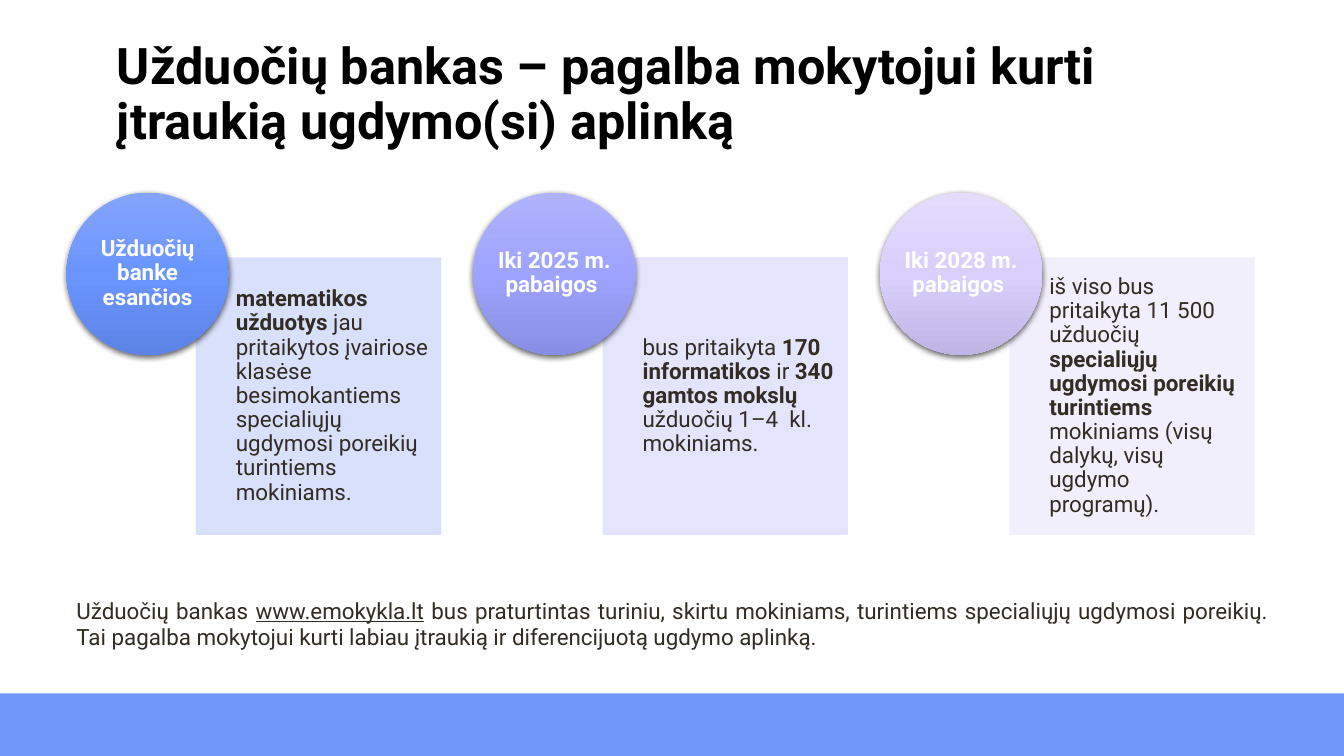
from dataclasses import dataclass

from lxml import etree
from pptx import Presentation
from pptx import util as u
from pptx.dml.color import RGBColor
from pptx.enum import shapes, text
from pptx.oxml import parse_xml
from pptx.oxml.ns import nsdecls, qn


@dataclass(frozen=True)
class Theme:
    face: str = "Roboto"
    black: str = "000000"
    white: str = "FFFFFF"
    ink: str = "322C23"
    band: str = "7198F8"
    head: int = 36
    body: int = 16


class Page:
    def __init__(self, deck, theme):
        self.deck = deck
        self.theme = theme
        self.slide = deck.slides.add_slide(deck.slide_layouts[6])

    def area(self, left, top, width, height):
        wide, high = self.deck.slide_width, self.deck.slide_height
        return (u.Emu(round(wide * left / 100)), u.Emu(round(high * top / 100)),
                u.Emu(round(wide * width / 100)), u.Emu(round(high * height / 100)))

    def letter(self, shape, parts, size, color, bold=None, align=text.PP_ALIGN.LEFT,
               anchor=text.MSO_ANCHOR.MIDDLE, inset=(0, 0, 0, 0), lead=0.9):
        frame = shape.text_frame
        frame.word_wrap = True
        frame.vertical_anchor = anchor
        (frame.margin_left, frame.margin_top,
         frame.margin_right, frame.margin_bottom) = map(u.Inches, inset)
        para = frame.paragraphs[0]
        para.alignment = align
        para.line_spacing = lead
        font = para.font
        font.name = self.theme.face
        font.size = u.Pt(size)
        font.color.rgb = RGBColor.from_string(color)
        font.bold = bold
        for words, style in parts:
            run = para.add_run()
            run.text = words
            if "b" in style:
                run.font.bold = True
            if "u" in style:
                run.font.underline = True

    def label(self, area, parts, size, color, **style):
        box = self.slide.shapes.add_textbox(*self.area(*area))
        self.letter(box, parts, size, color, **style)

    def block(self, kind, area):
        shape = self.slide.shapes.add_shape(kind, *self.area(*area))
        shape.shadow.inherit = False
        return shape

    def panel(self, area, color, alpha=None):
        shape = self.block(shapes.MSO_SHAPE.RECTANGLE, area)
        shape.fill.solid()
        shape.fill.fore_color.rgb = RGBColor.from_string(color)
        if alpha is None:
            shape.line.fill.background()
            return shape
        shape.line.color.rgb = RGBColor.from_string(color)
        shape.line.width = u.Pt(1)
        for tint in shape.element.spPr.iter(qn("a:srgbClr")):
            etree.SubElement(tint, qn("a:alpha"), val=str(alpha * 1000))
        return shape

    def disc(self, area, shades):
        shape = self.block(shapes.MSO_SHAPE.OVAL, area)
        shape.line.fill.background()
        props = shape.element.spPr
        stops = "".join(
            f'<a:gs pos="{step * 50000}"><a:srgbClr val="{shade}"/></a:gs>'
            for step, shade in enumerate(shades))
        props.find(qn("a:prstGeom")).addnext(parse_xml(
            f'<a:gradFill {nsdecls("a")} rotWithShape="1"><a:gsLst>{stops}</a:gsLst>'
            '<a:lin ang="5400000" scaled="0"/></a:gradFill>'))
        props.find(qn("a:effectLst")).append(parse_xml(
            f'<a:outerShdw {nsdecls("a")} blurRad="{u.Pt(4.5)}" dist="{u.Pt(1.5)}" '
            'dir="5400000" rotWithShape="0"><a:srgbClr val="000000">'
            '<a:alpha val="63000"/></a:srgbClr></a:outerShdw>'))
        return shape

    def card(self, index, name, parts, pale, shades):
        shift = index * 30.26
        panel = self.panel((14.63 + shift, 34.13, 18.15, 36.53), pale, 90)
        self.letter(panel, parts, self.theme.body, self.theme.ink,
                    inset=(0.39, 0.12, 0.12, 0.12))
        disc = self.disc((4.95 + shift, 25.47, 12.08, 21.47), shades)
        self.letter(disc, [(name, "")], self.theme.body, self.theme.white,
                    bold=True, align=text.PP_ALIGN.CENTER)


CARDS = [
    ("Užduočių banke esančios",
     [("matematikos užduotys", "b"),
      (" jau pritaikytos įvairiose klasėse besimokantiems specialiųjų "
       "ugdymosi poreikių turintiems mokiniams.", "")],
     "D5DDFC", ("84A4FB", "6A95FF", "5C83E5")),
    ("Iki 2025 m. pabaigos ",
     [("bus pritaikyta ", ""), ("170 informatikos ", "b"), ("ir ", ""),
      ("340 gamtos mokslų ", "b"), ("užduočių 1–4  kl. mokiniams.", "")],
     "E2E2FD", ("B0B3FB", "9EA3FD", "888DE5")),
    ("Iki 2028 m. pabaigos ",
     [("iš viso bus pritaikyta 11 500 užduočių ", ""),
      ("specialiųjų ugdymosi poreikių turintiems", "b"),
      (" mokiniams (visų dalykų, visų ugdymo programų).", "")],
     "F1EEFD", ("E3DCFC", "D9D0FD", "BEB5E5")),
]


def main():
    deck = Presentation()
    deck.slide_width, deck.slide_height = u.Inches(13.33), u.Inches(7.5)
    theme = Theme()
    page = Page(deck, theme)
    page.panel((0, 91.73, 100, 8.27), theme.band)
    page.label((8.7, 4.93, 82.67, 15.47),
               [("Užduočių bankas – pagalba mokytojui kurti įtraukią ugdymo(si) aplinką", "")],
               theme.head, theme.black, bold=True)
    for index, card in enumerate(CARDS):
        page.card(index, *card)
    page.label((4.95, 78.27, 90.17, 8.53),
               [("Užduočių bankas ", ""), ("www.emokykla.lt", "u"),
                (" bus praturtintas turiniu, skirtu mokiniams, turintiems specialiųjų "
                 "ugdymosi poreikių. Tai pagalba mokytojui kurti labiau įtraukią ir "
                 "diferencijuotą ugdymo aplinką.", "")],
               theme.body, theme.ink, align=text.PP_ALIGN.JUSTIFY,
               anchor=text.MSO_ANCHOR.TOP, inset=(0.1, 0.05, 0.1, 0.05), lead=1.0)
    deck.save("out.pptx")


if __name__ == "__main__":
    main()
